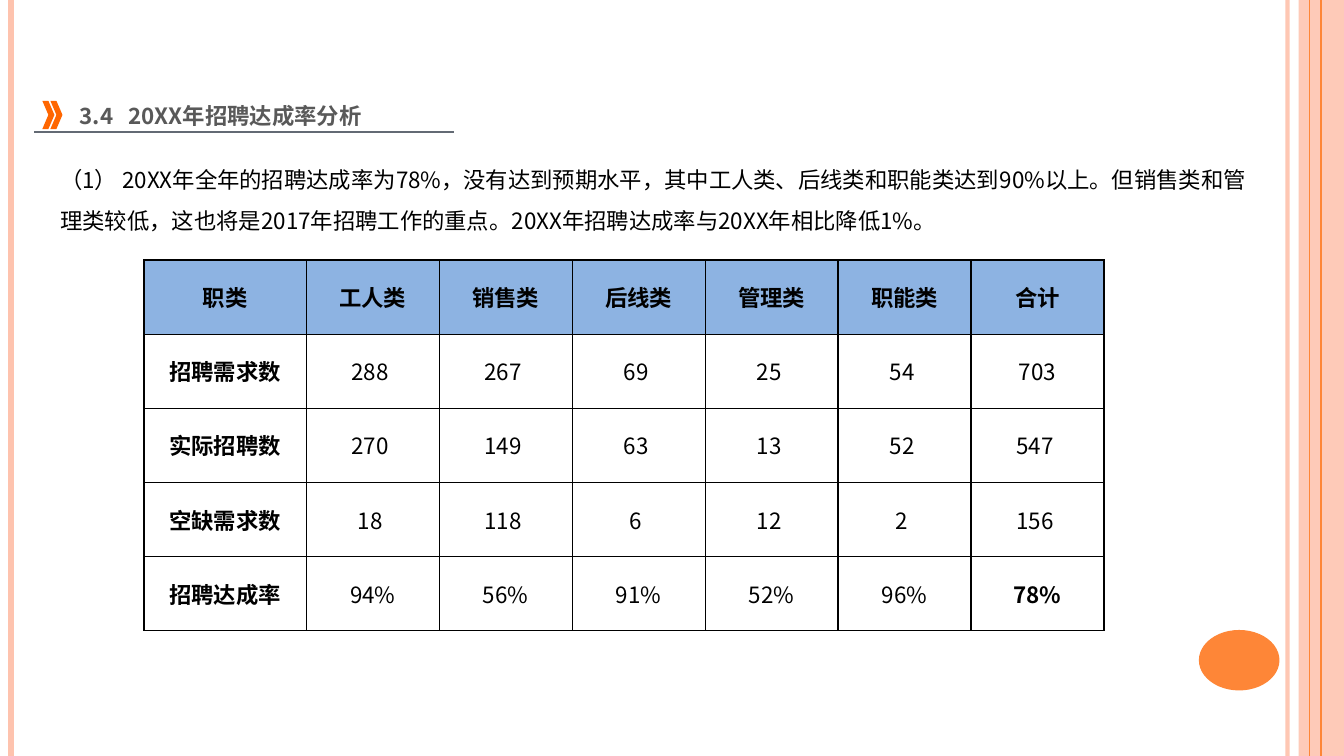
"""Build the slide on the yearly hiring completion rate."""
from lxml.etree import SubElement
from pptx import Presentation
from pptx.dml.color import RGBColor
from pptx.enum.shapes import MSO_CONNECTOR, MSO_SHAPE
from pptx.enum.text import MSO_ANCHOR, MSO_AUTO_SIZE, PP_ALIGN
from pptx.oxml.ns import qn
from pptx.util import Pt

TITLE = "3.4\t20XX年招聘达成率分析"
BODY = ("（1） 20XX年全年的招聘达成率为78%，没有达到预期水平，其中工人类、后线类和"
        "职能类达到90%以上。但销售类和管理类较低，这也将是2017年招聘工作的重点。"
        "20XX年招聘达成率与20XX年相比降低1%。")
ROWS = [
    ("职类", "工人类", "销售类", "后线类", "管理类", "职能类", "合计"),
    ("招聘需求数", "288 ", "267 ", "69 ", "25 ", "54 ", "703"),
    ("实际招聘数", "270 ", "149 ", "63 ", "13 ", "52 ", "547 "),
    ("空缺需求数", "18 ", "118 ", "6 ", "12 ", "2 ", "156 "),
    ("招聘达成率", "94%", "56%", "91%", "52%", "96%", "78%"),
]

BLACK = RGBColor(0x00, 0x00, 0x00)
GREY = RGBColor(0x59, 0x59, 0x59)
SLATE = RGBColor(0x63, 0x6A, 0x74)
BLUE = RGBColor(0x8D, 0xB3, 0xE2)
PEACH = RGBColor(0xFE, 0xC3, 0xAE)
ORANGE = RGBColor(0xFE, 0x86, 0x37)
VIVID = RGBColor(0xFF, 0x66, 0x00)
SANS, LATIN = "Noto Sans CJK SC", "Calibri"

WIDE, HIGH = 960.48, 540
STRIPES = [
    (920.2, PEACH, 3, 93),
    (7.92, PEACH, 4.5, 100),
    (943.92, ORANGE, 1.5, 100),
    (936, ORANGE, 0.75, 100),
]
SHAPES = [
    (MSO_SHAPE.RECTANGLE, (928.08, 0, 32.4, HIGH), PEACH, 87),
    (MSO_SHAPE.OVAL, (856.8, 450, 57.6, 43.2), ORANGE, 100),
    (MSO_SHAPE.CHEVRON, (30.24, 72, 8.64, 20.16), VIVID, 100),
    (MSO_SHAPE.CHEVRON, (36, 72, 8.64, 20.16), VIVID, 100),
]
TITLE_BOX = (49.68, 67.68, 289.44, 27.36)
BODY_BOX = (36, 105.84, 871.92, 94.32)
TABLE_AT = (102.96, 185.76)
COLS = [115.92] + [95.04] * 6
ROW_HIGH = 52.92
INDENT = 35

FRAME = {"word_wrap": True, "auto_size": MSO_AUTO_SIZE.SHAPE_TO_FIT_TEXT,
         "vertical_anchor": MSO_ANCHOR.TOP}
CELL = {"vertical_anchor": MSO_ANCHOR.MIDDLE, "margin_left": Pt(5.04),
        "margin_right": Pt(5.04), "margin_top": 0, "margin_bottom": 0}
PLAIN = {"first_row": False, "horz_banding": False}


def apply(item, values):
    for name, value in values.items():
        setattr(item, name, value)


def points(values):
    return [Pt(value) for value in values]


def fade(fill, alpha):
    if alpha < 100:
        for color in fill.iter(qn("a:srgbClr")):
            SubElement(color, qn("a:alpha"), val=str(alpha * 1000))


def write(frame, text, color, face, bold, align, space):
    para = frame.paragraphs[0]
    apply(para, {"alignment": align, "line_spacing": space})
    run = para.add_run()
    run.text = text
    apply(run.font, {"name": face, "size": Pt(16), "bold": bold})
    run.font.color.rgb = color
    SubElement(run.font._element, qn("a:ea"), typeface=SANS)
    return para


def add_line(slide, start, end, color, width, alpha=100):
    line = slide.shapes.add_connector(
        MSO_CONNECTOR.STRAIGHT, *points(start + end))
    line.line.color.rgb = color
    line.line.width = Pt(width)
    props = line._element.spPr
    fade(props, alpha)
    SubElement(props, qn("a:effectLst"))


def add_shape(slide, kind, box, color, alpha):
    shape = slide.shapes.add_shape(kind, *points(box))
    shape.shadow.inherit = False
    shape.fill.solid()
    shape.fill.fore_color.rgb = color
    shape.line.fill.background()
    fade(shape._element.spPr, alpha)


def add_title(slide):
    title = slide.shapes.title
    sides = ("left", "top", "width", "height")
    apply(title, dict(zip(sides, points(TITLE_BOX))))
    apply(title.text_frame, FRAME)
    para = write(title.text_frame, TITLE, GREY, SANS, True, PP_ALIGN.LEFT, 1.1)
    props = para._p.get_or_add_pPr()
    props.set("marL", str(Pt(INDENT)))
    props.set("indent", str(-Pt(INDENT)))


def add_body(slide):
    box = slide.shapes.add_textbox(*points(BODY_BOX))
    apply(box.text_frame, FRAME)
    write(box.text_frame, BODY, BLACK, SANS, False, PP_ALIGN.LEFT, 1.5)


def add_edges(cell):
    props = cell._tc.get_or_add_tcPr()
    for side in ("lnL", "lnR", "lnT", "lnB"):
        edge = SubElement(props, qn(f"a:{side}"), w=str(Pt(1)))
        fill = SubElement(edge, qn("a:solidFill"))
        SubElement(fill, qn("a:srgbClr"), val=str(BLACK))


def add_table(slide):
    size = (sum(COLS), ROW_HIGH * len(ROWS))
    table = slide.shapes.add_table(
        len(ROWS), len(COLS), *points(TABLE_AT + size)).table
    apply(table, PLAIN)
    for col, width in zip(table.columns, COLS):
        col.width = Pt(width)
    for r, row in enumerate(ROWS):
        table.rows[r].height = Pt(ROW_HIGH)
        for c, text in enumerate(row):
            cell = table.cell(r, c)
            apply(cell, CELL)
            add_edges(cell)
            if r == 0:
                cell.fill.solid()
                cell.fill.fore_color.rgb = BLUE
            else:
                cell.fill.background()
            head = r == 0 or c == 0
            total = r == len(ROWS) - 1 and c == len(COLS) - 1
            write(cell.text_frame, text, BLACK, LATIN if head else SANS,
                  head or total, PP_ALIGN.CENTER, 1.0)


def main():
    deck = Presentation()
    apply(deck, {"slide_width": Pt(WIDE), "slide_height": Pt(HIGH)})
    slide = deck.slides.add_slide(deck.slide_layouts[5])
    for shape in SHAPES:
        add_shape(slide, *shape)
    for x, color, width, alpha in STRIPES:
        add_line(slide, (x, 0), (x, HIGH), color, width, alpha)
    add_line(slide, (24.48, 94.32), (324.72, 94.32), SLATE, 1)
    add_title(slide)
    add_body(slide)
    add_table(slide)
    deck.save("out.pptx")


if __name__ == "__main__":
    main()
